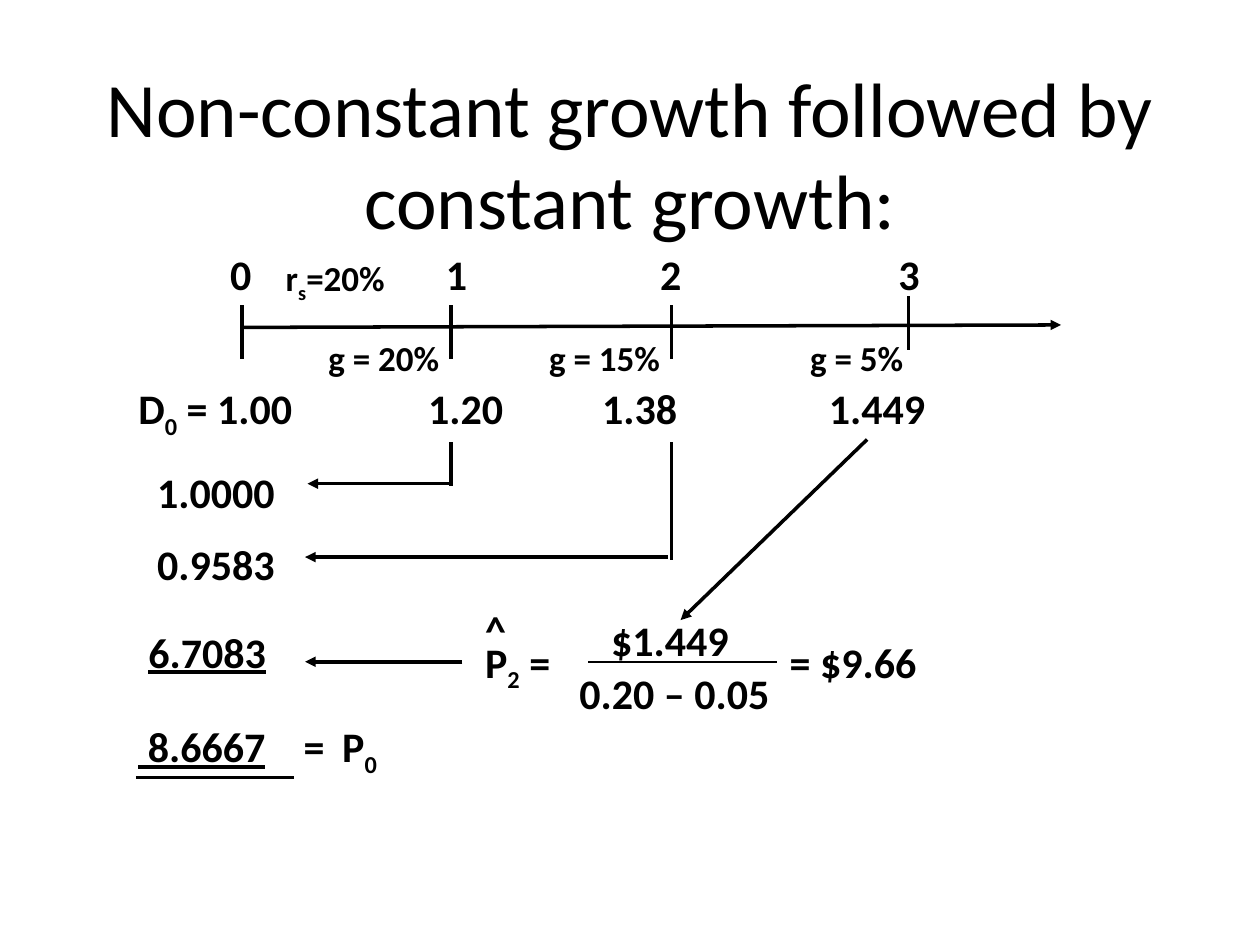
from lxml.etree import SubElement
from pptx import Presentation
from pptx.dml.color import RGBColor
from pptx.enum.shapes import MSO_CONNECTOR as Connector
from pptx.enum.text import MSO_ANCHOR as Anchor, PP_ALIGN as Align
from pptx.oxml.ns import qn
from pptx.util import Cm, Pt

BLACK = RGBColor(0, 0, 0)
FONT = "Calibri"
TITLE = "Non-constant growth followed by constant growth:"

TICK_HEIGHT = 1.09
LABEL_TOP, GROWTH_TOP = 4.88, 6.65
PERIODS = [
    # label, label left, tick x, tick top, growth, growth width
    ("0", 4.39, 4.88, 6.15, None, 0),
    ("1", 8.74, 9.09, 6.15, "g = 20%", 3.15),
    ("2", 13.06, 13.54, 6.15, "g = 15%", 3.15),
    ("3", 17.86, 18.31, 5.97, "g = 5%", 2.66),
]
GROWTH_OVERHANG = 0.43

PRESENT_VALUES = [
    ("1.0000", 2.92, 9.27, ""),
    ("0.9583", 2.92, 10.74, ""),
    ("6.7083", 2.74, 12.5, "u"),
]

DIVIDENDS = [("D", ""), ("0", "sub"), (" = 1.00\t1.20\t1.38\t1.449", "")]
DIVIDEND_TABS = [5.84, 9.35, 13.92]
PRICE = [(" 8.6667", "u"), ("\t=\tP", ""), ("0", "sub")]
PRICE_TABS = [3.33, 4.11]
RATE = [("r", ""), ("s", "sub"), ("=20%", "")]

FORMULA = [
    ([("$1.449", "")], 12.07, 12.27, 5.92),
    ([("P", ""), ("2", "sub"), (" =", "")], 9.53, 12.7, 6.99),
    ([("^", "")], 9.53, 12.07, 0.99),
    ([("0.20 – 0.05", "")], 11.43, 13.34, 4.88),
    ([("= $9.66", "")], 15.67, 12.7, 4.88),
]

LINES = [
    ((9.09, 8.92), (9.09, 9.8), 2),
    ((13.54, 8.92), (13.54, 11.28), 2),
    ((2.74, 15.67), (5.92, 15.67), 2),
    ((11.86, 13.34), (15.67, 13.34), 1),
]
ARROWS = [
    ((4.9, 6.6), (21.39, 6.55)),
    ((9.07, 9.75), (6.2, 9.75)),
    ((13.46, 11.23), (6.15, 11.23)),
    ((9.32, 13.34), (6.15, 13.34)),
    ((17.48, 8.86), (13.72, 12.5)),
]


def add_text(page, spans, left, top, width, height=1.27, size=24, bold=True, tabs=()):
    box = page.shapes.add_textbox(Cm(left), Cm(top), Cm(width), Cm(height))
    box.text_frame.word_wrap = True
    para = box.text_frame.paragraphs[0]
    font = para.font
    font.name, font.size, font.bold = FONT, Pt(size), bold
    font.color.rgb = BLACK
    if tabs:
        tab_list = para._p.get_or_add_pPr().find(qn("a:tabLst"))
        if tab_list is None:
            tab_list = SubElement(para._p.pPr, qn("a:tabLst"))
            para._p.pPr.insert(0, tab_list)
        for position in tabs:
            SubElement(tab_list, qn("a:tab"), pos=str(Cm(position)), algn="l")
    for text, style in spans:
        span = para.add_run()
        span.text = text
        if style == "u":
            span.font.underline = True
        elif style == "sub":
            span.font._element.set("baseline", "-25000")
    return box


def add_line(page, start, end, width=2, arrow=False):
    points = [Cm(value) for value in (*start, *end)]
    line = page.shapes.add_connector(Connector.STRAIGHT, *points)
    line.line.color.rgb = BLACK
    line.line.width = Pt(width)
    if arrow:
        SubElement(line.line._get_or_add_ln(), qn("a:tailEnd"), type="triangle")
    SubElement(line._element.spPr, qn("a:effectLst"))


def main():
    deck = Presentation()
    deck.slide_width, deck.slide_height = Cm(25.4), Cm(19.05)
    page = deck.slides.add_slide(deck.slide_layouts[6])

    title = add_text(page, [(TITLE, "")], 1.27, 1.07, 22.86, 4.01, size=44, bold=False)
    title.text_frame.vertical_anchor = Anchor.MIDDLE
    title.text_frame.paragraphs[0].alignment = Align.CENTER

    for label, left, tick, top, growth, width in PERIODS:
        add_text(page, [(label, "")], left, LABEL_TOP, 0.97)
        add_line(page, (tick, top), (tick, top + TICK_HEIGHT))
        if growth:
            growth_left = tick + GROWTH_OVERHANG - width
            add_text(page, [(growth, "")], growth_left, GROWTH_TOP, width, 1.09, size=20)

    add_text(page, RATE, 5.51, 5.05, 2.84, 1.09, size=20)
    add_text(page, DIVIDENDS, 2.54, 7.59, 16.46, tabs=DIVIDEND_TABS)
    for value, left, top, style in PRESENT_VALUES:
        add_text(page, [(value, style)], left, top, 3.1)
    add_text(page, PRICE, 2.54, 14.4, 6.1, tabs=PRICE_TABS)
    for spans, left, top, width in FORMULA:
        add_text(page, spans, left, top, width)

    for start, end, width in LINES:
        add_line(page, start, end, width)
    for start, end in ARROWS:
        add_line(page, start, end, arrow=True)

    deck.save("out.pptx")


if __name__ == "__main__":
    main()
